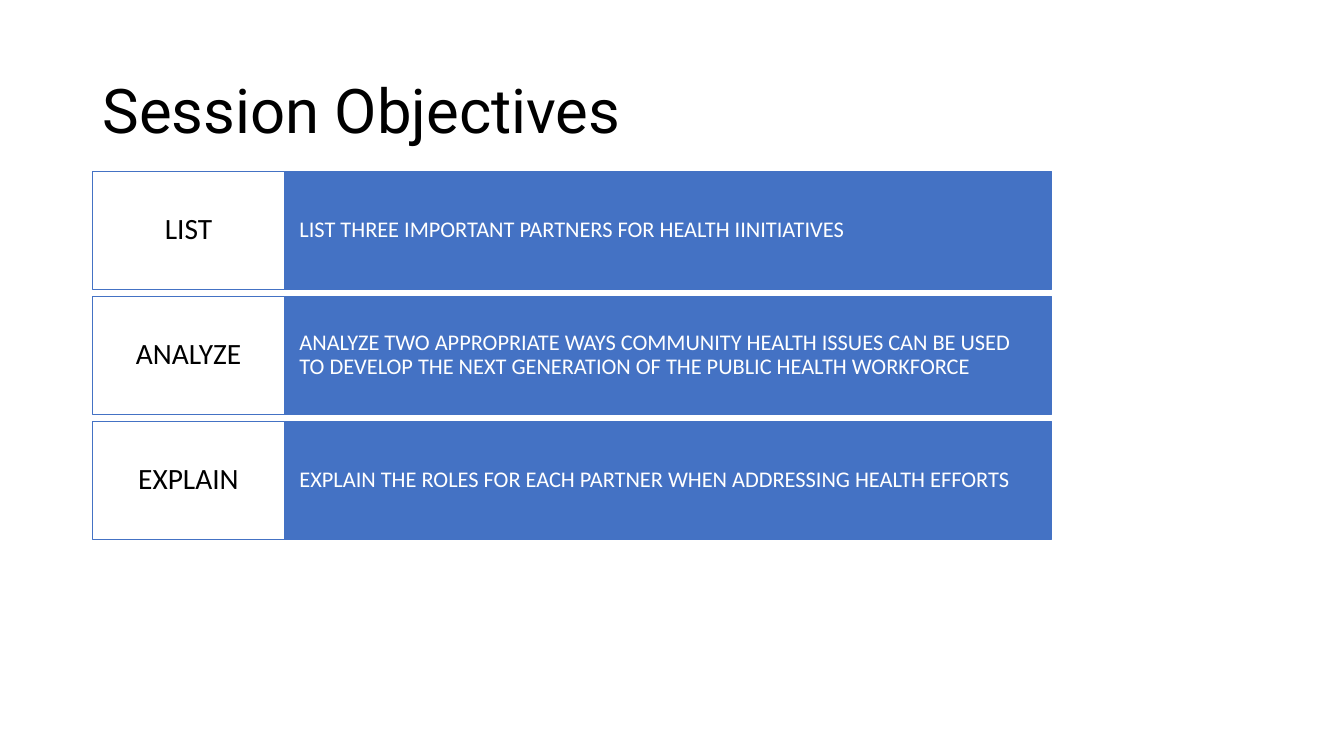
import pptx
import pptx.dml.color
import pptx.enum.shapes
import pptx.enum.text
import pptx.util

Inches = pptx.util.Inches
ALIGN = pptx.enum.text.PP_ALIGN
BLUE, WHITE, BLACK = "4472C4", "FFFFFF", "000000"


def color(hex_text):
    return pptx.dml.color.RGBColor.from_string(hex_text)


def write(shape, text, font, size, ink, align, margins):
    """Fill a shape with one vertically centred paragraph; margins are (side, top and bottom)."""
    frame = shape.text_frame
    side, edge = map(Inches, margins)
    frame_format = {
        "word_wrap": True,
        "vertical_anchor": pptx.enum.text.MSO_ANCHOR.MIDDLE,
        "margin_left": side,
        "margin_right": side,
        "margin_top": edge,
        "margin_bottom": edge,
    }
    for name, value in frame_format.items():
        setattr(frame, name, value)
    para = frame.paragraphs[0]
    para.alignment = align
    para.line_spacing = 0.9
    span = para.add_run()
    span.text = text
    for name, value in {"name": font, "size": pptx.util.Pt(size), "bold": False}.items():
        setattr(span.font, name, value)
    span.font.color.rgb = color(ink)


deck = pptx.Presentation()
deck.slide_width = Inches(13.33)
deck.slide_height = Inches(7.5)
page = deck.slides.add_slide(deck.slide_layouts[6])

title = page.shapes.add_textbox(Inches(0.92), Inches(0.4), Inches(11.5), Inches(1.45))
write(title, "Session Objectives", "Roboto", 44, BLACK, ALIGN.LEFT, (0.1, 0.05))

objectives = [
    ("LIST", "LIST THREE IMPORTANT PARTNERS FOR HEALTH IINITIATIVES"),
    ("ANALYZE", "ANALYZE TWO APPROPRIATE WAYS COMMUNITY HEALTH ISSUES CAN BE USED "
                "TO DEVELOP THE NEXT GENERATION OF THE PUBLIC HEALTH WORKFORCE"),
    ("EXPLAIN", "EXPLAIN THE ROLES FOR EACH PARTNER WHEN ADDRESSING HEALTH EFFORTS"),
]
first_top, row_step, row_height = 1.7, 1.24, 1.17

for row, (verb, objective) in enumerate(objectives):
    top = first_top + row * row_step
    cells = [
        (2.82, 7.61, BLUE, objective, 16, WHITE, ALIGN.LEFT, (0.15, 0.3)),
        (0.92, 1.9, WHITE, verb, 21, BLACK, ALIGN.CENTER, (0.1, 0.12)),
    ]
    for left, width, fill, text, size, ink, align, margins in cells:
        box = page.shapes.add_shape(
            pptx.enum.shapes.MSO_SHAPE.RECTANGLE,
            Inches(left), Inches(top), Inches(width), Inches(row_height))
        box.shadow.inherit = False
        box.fill.solid()
        box.fill.fore_color.rgb = color(fill)
        box.line.color.rgb = color(BLUE)
        box.line.width = pptx.util.Pt(1)
        write(box, text, "Calibri", size, ink, align, margins)

deck.save("out.pptx")
